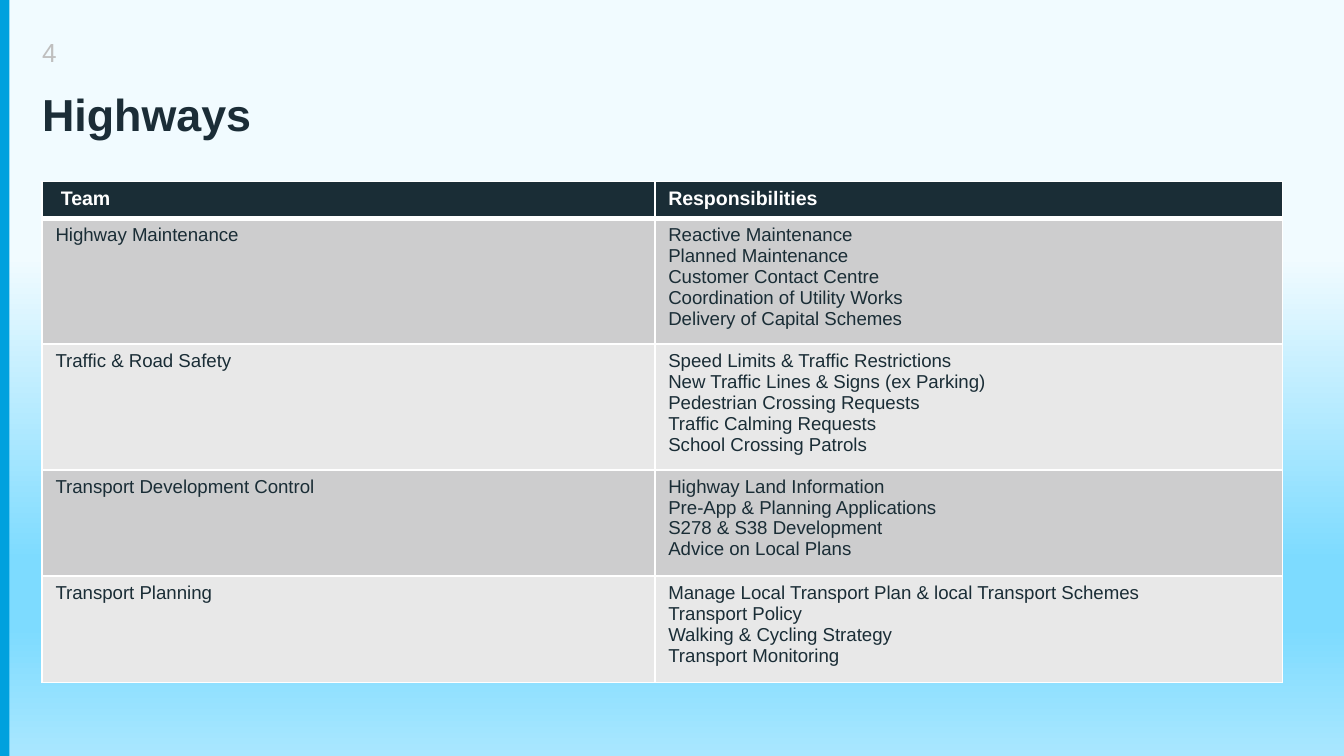
from copy import deepcopy
from lxml.etree import SubElement
from pptx import Presentation
from pptx.dml.color import RGBColor as Rgb
from pptx.enum.shapes import MSO_SHAPE as Shape
from pptx.oxml.ns import qn
from pptx.util import Inches, Pt

COLORS = {
    "accent": "00A1DE", "number": "BFBFBF", "title": "1B2D37", "ink": "1A2D36",
    "white": "FFFFFF", "dark_band": "CDCDCE", "light_band": "E8E8E8",
}
SKY = [(34, "F1FBFF"), (74, "7DDBFF"), (83, "7DDBFF"), (100, "A9E7FF")]
HEADER = {"size": Pt(10.5), "bold": True, "color": "white"}
BODY = {"size": Pt(10), "bold": False, "color": "ink"}
TEAMS = {
    "Highway Maintenance": [
        "Reactive Maintenance", "Planned Maintenance", "Customer Contact Centre",
        "Coordination of Utility Works", "Delivery of Capital Schemes"],
    "Traffic & Road Safety": [
        "Speed Limits & Traffic Restrictions", "New Traffic Lines & Signs (ex Parking)",
        "Pedestrian Crossing Requests", "Traffic Calming Requests",
        "School Crossing Patrols"],
    "Transport Development Control": [
        "Highway Land Information", "Pre-App & Planning Applications",
        "S278 & S38 Development", "Advice on Local Plans"],
    "Transport Planning": [
        "Manage Local Transport Plan & local Transport Schemes", "Transport Policy",
        "Walking & Cycling Strategy", "Transport Monitoring"],
}


def write(frame, lines, style):
    for index, line in enumerate(lines):
        para = frame.add_paragraph() if index else frame.paragraphs[0]
        span = para.add_run()
        span.text = line
        span.font.name = "Arial"
        for name, value in style.items():
            if name == "color":
                span.font.color.rgb = Rgb.from_string(COLORS[value])
            else:
                setattr(span.font, name, value)


def outline(cell, widths):
    props = cell._tc.get_or_add_tcPr()
    for index, (side, width) in enumerate(widths.items()):
        line = SubElement(props, qn(f"a:ln{side}"), w=str(Pt(width)))
        fill = SubElement(line, qn("a:solidFill"))
        SubElement(fill, qn("a:srgbClr"), val=COLORS["white"])
        props.insert(index, line)


deck = Presentation()
deck.slide_width = Inches(10)
deck.slide_height = deck.slide_width * 9 // 16
page = deck.slides.add_slide(deck.slide_layouts[6])
column, row = deck.slide_width // 100, deck.slide_height // 100
left = round(3.13 * column)

backdrop = page.background.fill
backdrop.gradient()
backdrop.gradient_angle = 270
stop_list = next(page._element.iter(qn("a:gsLst")))
model = deepcopy(stop_list[0])
for stop in list(stop_list):
    stop_list.remove(stop)
for position, color in SKY:
    stop_list.append(deepcopy(model))
    stop = backdrop.gradient_stops[-1]
    stop.position = position / 100
    stop.color.rgb = Rgb.from_string(color)

stripe = page.shapes.add_shape(Shape.RECTANGLE, 0, 0, round(0.7 * column), deck.slide_height)
stripe.shadow.inherit = False
stripe.fill.solid()
stripe.fill.fore_color.rgb = Rgb.from_string(COLORS["accent"])
stripe.line.fill.background()

for text, top, width, height, style in [
    ("4", 4.8, 5, 4.3, {"size": Pt(14), "color": "number"}),
    ("Highways", 11.45, 79.5, 7.1, {"size": Pt(24), "bold": True, "color": "title"}),
]:
    box = page.shapes.add_textbox(left, round(top * row), round(width * column), round(height * row))
    frame = box.text_frame
    for name, value in {"word_wrap": True, "margin_left": 0, "margin_right": 0,
                        "margin_top": 0, "margin_bottom": 0}.items():
        setattr(frame, name, value)
    write(frame, [text], style)

rows = [([" Team"], ["Responsibilities"])]
rows += [([team], duties) for team, duties in TEAMS.items()]
heights = [0] + [14.08] * len(TEAMS)
holder = page.shapes.add_table(
    len(rows), 2, left, 24 * row, round(92.3 * column), round(66.3 * row))
table = holder.table
for index, share in enumerate([45.6, 46.7]):
    table.columns[index].width = round(share * column)

for index, (lines_by_column, height) in enumerate(zip(rows, heights)):
    table.rows[index].height = round(height * row)
    band = "ink" if index == 0 else ("light_band", "dark_band")[index % 2]
    widths = {"L": 1, "R": 1, "T": 3 if index == 1 else 1, "B": 3 if index == 0 else 1}
    for cell, lines in zip(table.rows[index].cells, lines_by_column):
        cell.fill.solid()
        cell.fill.fore_color.rgb = Rgb.from_string(COLORS[band])
        outline(cell, widths)
        write(cell.text_frame, lines, BODY if index else HEADER)
holder.height = round(66.3 * row)

deck.save("out.pptx")
